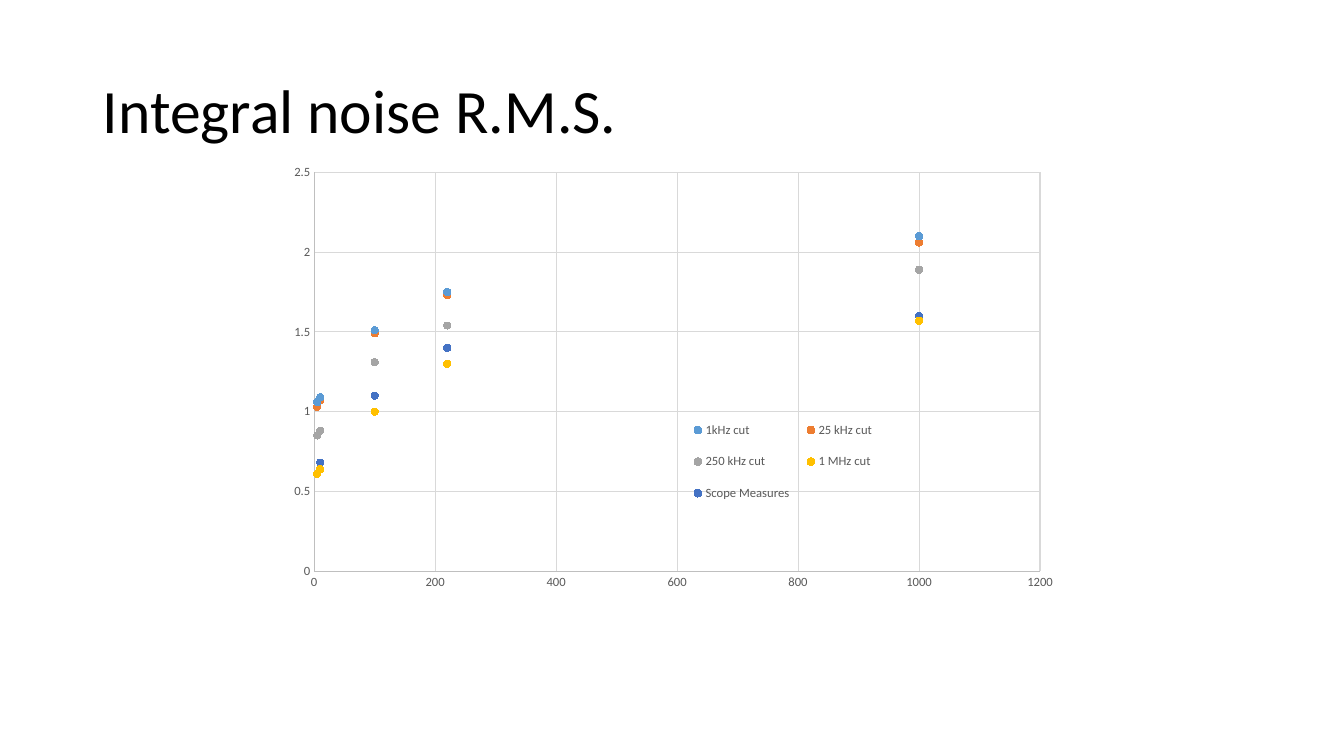
from dataclasses import dataclass

import pptx
import pptx.chart.data
import pptx.dml.color
import pptx.enum.chart
import pptx.enum.text
import pptx.oxml
import pptx.oxml.ns
import pptx.util
from pptx.util import Inches

RGBColor = pptx.dml.color.RGBColor
BLACK = RGBColor(0x00, 0x00, 0x00)
LABEL_GRAY = RGBColor(0x59, 0x59, 0x59)
AXIS_GRAY = RGBColor(0xBF, 0xBF, 0xBF)
GRID_GRAY = RGBColor(0xD9, 0xD9, 0xD9)
LIGHT_BLUE = RGBColor(0x5B, 0x9B, 0xD5)
ORANGE = RGBColor(0xED, 0x7D, 0x31)
MID_GRAY = RGBColor(0xA5, 0xA5, 0xA5)
YELLOW = RGBColor(0xFF, 0xC0, 0x00)
DARK_BLUE = RGBColor(0x44, 0x72, 0xC4)
FONT_NAME = "Calibri"


@dataclass(frozen=True)
class NoiseSeries:
    name: str
    color: RGBColor
    x_values: tuple[float, ...]
    y_values: tuple[float, ...]


@dataclass(frozen=True)
class ManualLayout:
    x: float
    y: float
    w: float
    h: float
    inner: bool = False


X_VALUES = (5, 10, 100, 220, 1000)
NOISE_SERIES = (
    NoiseSeries("1kHz cut", LIGHT_BLUE, X_VALUES, (1.06, 1.09, 1.51, 1.75, 2.1)),
    NoiseSeries("25 kHz cut", ORANGE, X_VALUES, (1.03, 1.07, 1.49, 1.73, 2.06)),
    NoiseSeries("250 kHz cut", MID_GRAY, X_VALUES, (0.85, 0.88, 1.31, 1.54, 1.89)),
    NoiseSeries("1 MHz cut", YELLOW, X_VALUES, (0.61, 0.64, 1, 1.3, 1.57)),
    NoiseSeries("Scope Measures", DARK_BLUE, X_VALUES[1:], (0.68, 1.1, 1.4, 1.6)),
)
PLOT_LAYOUT = ManualLayout(0.081, 0.132, 0.85, 0.714, inner=True)
LEGEND_LAYOUT = ManualLayout(0.51, 0.55, 0.24, 0.2)


def apply_format(target: object, values: dict[str, object]) -> None:
    for name, value in values.items():
        setattr(target, name, value)


def format_font(font: pptx.text.text.Font, size: float, color: RGBColor) -> None:
    apply_format(font, {"name": FONT_NAME, "size": pptx.util.Pt(size), "bold": False})
    font.color.rgb = color


def format_line(line: pptx.dml.line.LineFormat, color: RGBColor) -> None:
    line.color.rgb = color
    line.width = pptx.util.Pt(0.75)


def layout_element(layout: ManualLayout):
    target = '<c:layoutTarget val="inner"/>' if layout.inner else ""
    modes = "".join(f'<c:{axis}Mode val="edge"/>' for axis in "xy")
    sizes = "".join(f'<c:{key} val="{getattr(layout, key)}"/>' for key in "xywh")
    return pptx.oxml.parse_xml(
        f'<c:layout {pptx.oxml.ns.nsdecls("c")}><c:manualLayout>'
        f"{target}{modes}{sizes}</c:manualLayout></c:layout>"
    )


def remove_layouts(parent) -> None:
    for element in parent.findall(pptx.oxml.ns.qn("c:layout")):
        parent.remove(element)


def add_title(slide: pptx.slide.Slide) -> None:
    title = slide.shapes.title
    apply_format(title, {"left": Inches(0.92), "top": Inches(0.4),
                         "width": Inches(11.5), "height": Inches(1.45)})
    title.text_frame.text = "Integral noise R.M.S."
    title.text_frame.vertical_anchor = pptx.enum.text.MSO_ANCHOR.MIDDLE
    paragraph = title.text_frame.paragraphs[0]
    apply_format(paragraph, {"alignment": pptx.enum.text.PP_ALIGN.LEFT,
                             "line_spacing": 0.9})
    format_font(paragraph.runs[0].font, 44, BLACK)


def format_axis(axis, maximum: float, step: float) -> None:
    no_ticks = pptx.enum.chart.XL_TICK_MARK.NONE
    apply_format(axis, {"minimum_scale": 0, "maximum_scale": maximum,
                        "major_unit": step, "has_major_gridlines": True,
                        "major_tick_mark": no_ticks, "minor_tick_mark": no_ticks})
    apply_format(axis.tick_labels, {"number_format": "General",
                                    "number_format_is_linked": False})
    format_font(axis.tick_labels.font, 9, LABEL_GRAY)
    format_line(axis.format.line, AXIS_GRAY)
    format_line(axis.major_gridlines.format.line, GRID_GRAY)


def add_noise_chart(slide: pptx.slide.Slide) -> None:
    chart_data = pptx.chart.data.XyChartData()
    for noise in NOISE_SERIES:
        series_data = chart_data.add_series(noise.name)
        for x_value, y_value in zip(noise.x_values, noise.y_values):
            series_data.add_data_point(x_value, y_value)
    chart = slide.shapes.add_chart(
        pptx.enum.chart.XL_CHART_TYPE.XY_SCATTER,
        Inches(2.43), Inches(0.98), Inches(8.47), Inches(5.54), chart_data,
    ).chart
    apply_format(chart, {"has_title": False, "has_legend": True})
    format_font(chart.font, 10, BLACK)
    chart.plots[0].vary_by_categories = False

    # Markers without joining lines
    for series, noise in zip(chart.plots[0].series, NOISE_SERIES):
        series.smooth = False
        series.format.line.fill.background()
        apply_format(series.marker, {
            "style": pptx.enum.chart.XL_MARKER_STYLE.CIRCLE, "size": 5})
        series.marker.format.fill.solid()
        series.marker.format.fill.fore_color.rgb = noise.color
        format_line(series.marker.format.line, noise.color)

    # Axes
    format_axis(chart.category_axis, 1200, 200)
    format_axis(chart.value_axis, 2.5, 0.5)

    # Legend and plot area positions
    apply_format(chart.legend, {
        "position": pptx.enum.chart.XL_LEGEND_POSITION.BOTTOM,
        "include_in_layout": False})
    format_font(chart.legend.font, 9, LABEL_GRAY)
    qn = pptx.oxml.ns.qn
    legend = chart.element.find(".//" + qn("c:legend"))
    remove_layouts(legend)
    legend.find(qn("c:legendPos")).addnext(layout_element(LEGEND_LAYOUT))
    plot_area = chart.element.find(".//" + qn("c:plotArea"))
    remove_layouts(plot_area)
    plot_area.insert(0, layout_element(PLOT_LAYOUT))


def main() -> None:
    presentation = pptx.Presentation()
    apply_format(presentation, {"slide_width": Inches(13.33),
                                "slide_height": Inches(7.5)})
    slide = presentation.slides.add_slide(presentation.slide_layouts[5])
    add_title(slide)
    add_noise_chart(slide)
    presentation.save("out.pptx")


if __name__ == "__main__":
    main()
